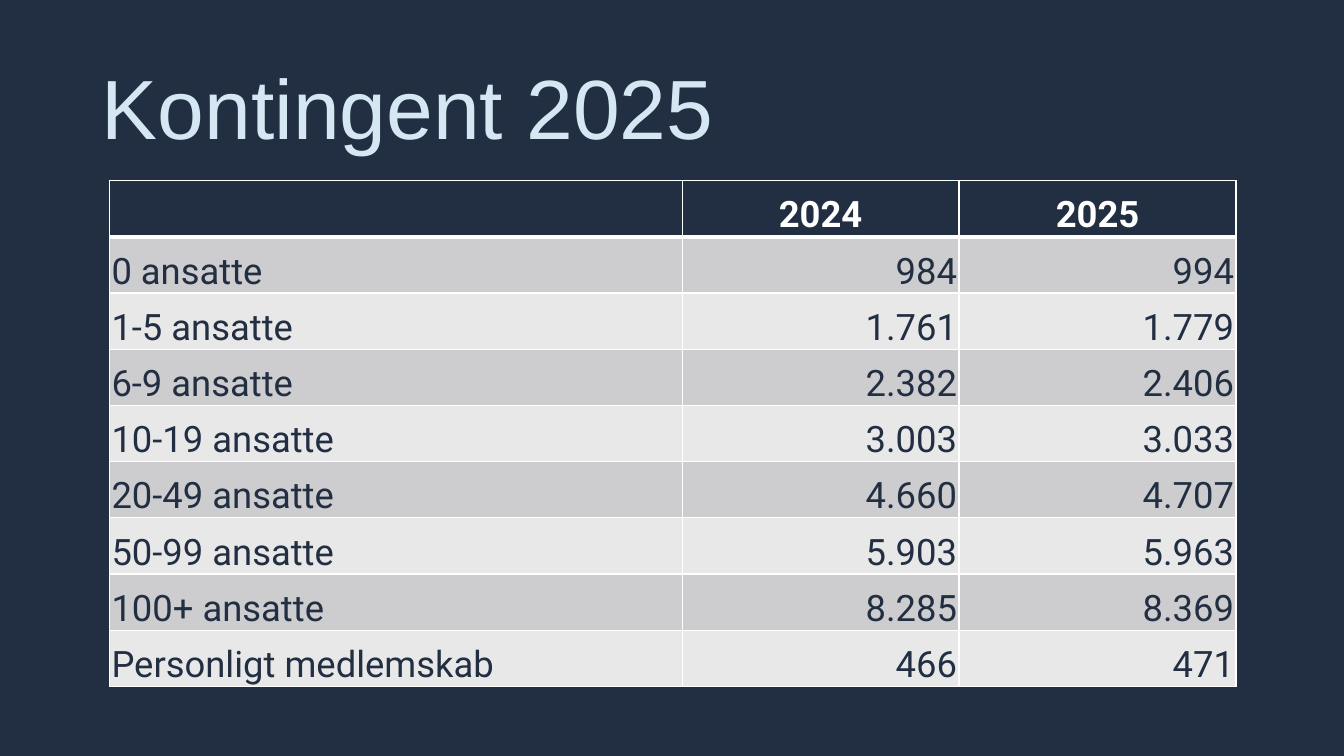
"""Build the slide with the 2025 membership fees by company size."""
from typing import NamedTuple

from lxml import etree
from pptx import Presentation
from pptx.dml.color import RGBColor
from pptx.enum.text import MSO_ANCHOR, MSO_AUTO_SIZE, PP_ALIGN
from pptx.oxml.ns import qn
from pptx.util import Cm, Pt

LEFT, CENTER, RIGHT = PP_ALIGN.LEFT, PP_ALIGN.CENTER, PP_ALIGN.RIGHT
BOTTOM = MSO_ANCHOR.BOTTOM
NO_AUTOFIT = MSO_AUTO_SIZE.NONE
TITLE_ONLY = 5

NAVY, ICE, WHITE = "222E41", "D5E7F2", "FFFFFF"
BANDS = ("CDCDCF", "E8E8E9")
COLUMN_WIDTHS = (14.43, 6.98, 6.98)
TABLE_HEIGHT = 12.75
THIN, THICK = 1, 3


class FeeRow(NamedTuple):
    group: str
    fee_2024: str
    fee_2025: str


class RowStyle(NamedTuple):
    fill: str
    ink: str
    bold: bool
    aligns: tuple
    top: int
    bottom: int


FEES = (
    FeeRow("", "2024", "2025"),
    FeeRow("0 ansatte", "984", "994"),
    FeeRow("1-5 ansatte", "1.761", "1.779"),
    FeeRow("6-9 ansatte", "2.382", "2.406"),
    FeeRow("10-19 ansatte", "3.003", "3.033"),
    FeeRow("20-49 ansatte", "4.660", "4.707"),
    FeeRow("50-99 ansatte", "5.903", "5.963"),
    FeeRow("100+ ansatte", "8.285", "8.369"),
    FeeRow("Personligt medlemskab", "466", "471"),
)


def rgb(value: str) -> RGBColor:
    return RGBColor.from_string(value)


def style_for(row: int) -> RowStyle:
    if row == 0:
        return RowStyle(NAVY, WHITE, True, (LEFT, CENTER, CENTER), THIN, THICK)
    top = THICK if row == 1 else THIN
    return RowStyle(BANDS[(row - 1) % 2], NAVY, False, (LEFT, RIGHT, RIGHT), top, THIN)


def add_borders(cell, top: int, bottom: int) -> None:
    properties = cell._tc.get_or_add_tcPr()
    sides = (("a:lnL", THIN), ("a:lnR", THIN), ("a:lnT", top), ("a:lnB", bottom))
    for tag, width in sides:
        border = etree.SubElement(properties, qn(tag), w=str(Pt(width)))
        fill = etree.SubElement(border, qn("a:solidFill"))
        etree.SubElement(fill, qn("a:srgbClr"), val=WHITE)


def fill_cell(cell, text: str, style: RowStyle, align: PP_ALIGN) -> None:
    add_borders(cell, style.top, style.bottom)
    cell.fill.solid()
    cell.fill.fore_color.rgb = rgb(style.fill)
    cell.vertical_anchor = BOTTOM
    cell.margin_left = cell.margin_top = cell.margin_right = Cm(0.05)
    cell.margin_bottom = 0
    cell.text_frame.text = text
    paragraph = cell.text_frame.paragraphs[0]
    paragraph.alignment = align
    for run in paragraph.runs:
        run.font.name = "Roboto"
        run.font.size = Pt(26)
        run.font.bold = style.bold
        run.font.color.rgb = rgb(style.ink)


def add_title(slide, text: str) -> None:
    title = slide.shapes.title
    title.left, title.top, title.width, title.height = Cm(2.31), Cm(1.47), Cm(27.13), Cm(2.62)
    frame = title.text_frame
    frame.text = text
    frame.auto_size = NO_AUTOFIT
    frame.vertical_anchor = BOTTOM
    paragraph = frame.paragraphs[0]
    paragraph.alignment = LEFT
    paragraph.line_spacing = 0.9
    font = paragraph.runs[0].font
    font.name = "Arial"
    font.size = Pt(60)
    font.color.rgb = rgb(ICE)


def add_fee_table(slide) -> None:
    table = slide.shapes.add_table(
        len(FEES), len(COLUMN_WIDTHS),
        Cm(2.76), Cm(4.55), Cm(sum(COLUMN_WIDTHS)), Cm(TABLE_HEIGHT),
    ).table
    for column, width in zip(table.columns, COLUMN_WIDTHS):
        column.width = Cm(width)
    for row, fee in enumerate(FEES):
        style = style_for(row)
        for column, text in enumerate(fee):
            fill_cell(table.cell(row, column), text, style, style.aligns[column])


def main() -> None:
    deck = Presentation()
    deck.slide_width, deck.slide_height = Cm(33.87), Cm(19.05)
    slide = deck.slides.add_slide(deck.slide_layouts[TITLE_ONLY])
    slide.background.fill.solid()
    slide.background.fill.fore_color.rgb = rgb(NAVY)
    add_title(slide, "Kontingent 2025")
    add_fee_table(slide)
    deck.save("out.pptx")


if __name__ == "__main__":
    main()
